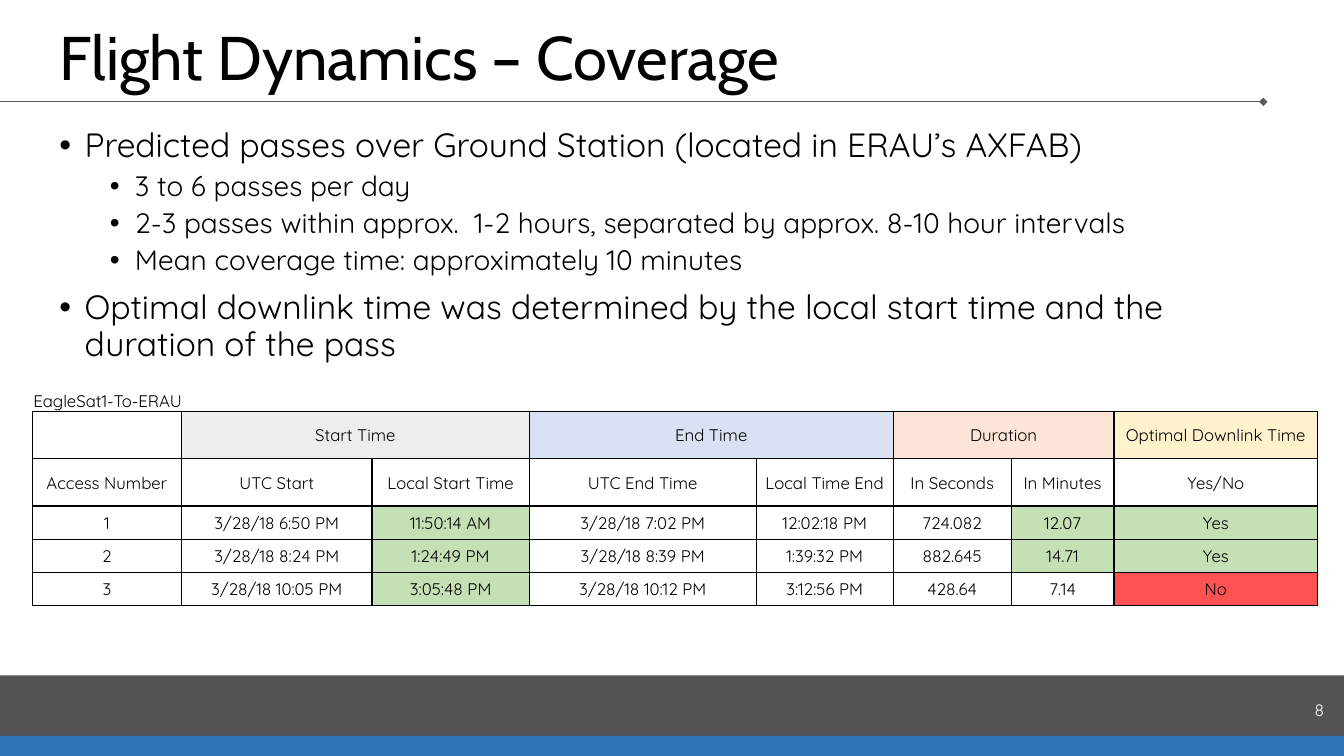
from dataclasses import dataclass
from typing import NamedTuple

from lxml import etree
from pptx import Presentation
from pptx import util as u
from pptx.dml import color
from pptx.enum import shapes, text
from pptx.oxml import ns

PX = u.Inches(1) // 100  # 100 px to the inch


@dataclass(frozen=True)
class Theme:
    heading_font: str = "Cabin"
    body_font: str = "Quicksand"
    black: str = "000000"
    white: str = "FFFFFF"
    rule: str = "595959"
    blue: str = "2E75B6"
    start: str = "EDEDED"
    end: str = "D9E1F2"
    duration: str = "FCE4D6"
    downlink: str = "FFF2CC"
    good: str = "C5E0B4"
    bad: str = "FF5353"
    title_size: int = 44
    point_size: int = 24
    subpoint_size: int = 20
    small_size: int = 12


THEME = Theme()


class Box(NamedTuple):
    left: int
    top: int
    width: int
    height: int

    def emu(self) -> list[int]:
        return [side * PX for side in self]


class Band(NamedTuple):
    box: Box
    fill: str
    opacity: int = 100


class Point(NamedTuple):
    words: str
    level: int = 0


class Group(NamedTuple):
    label: str
    column: int
    span: int
    fill: str


BANDS = [
    Band(Box(0, 670, 1333, 60), THEME.black, 67),
    Band(Box(0, 730, 1333, 20), THEME.blue),
]

POINTS = [
    Point("Predicted passes over Ground Station (located in ERAU’s AXFAB)"),
    Point("3 to 6 passes per day", 1),
    Point("2-3 passes within approx.  1-2 hours, separated by approx. 8-10 hour intervals", 1),
    Point("Mean coverage time: approximately 10 minutes", 1),
    Point("Optimal downlink time was determined by the local start time and the duration of the pass"),
]

COLUMNS = [148, 189, 156, 225, 136, 117, 102, 202]
ROWS = [33, 47, 47, 33, 33, 33]
GROUPS = [
    Group("Start Time", 1, 2, THEME.start),
    Group("End Time", 3, 2, THEME.end),
    Group("Duration", 5, 2, THEME.duration),
    Group("Optimal Downlink Time", 7, 1, THEME.downlink),
]
PASSES = [
    ["Access Number", "UTC Start", "Local Start Time", "UTC End Time",
     "Local Time End", "In Seconds", "In Minutes", "Yes/No"],
    ["1", "3/28/18 6:50 PM", "11:50:14 AM", "3/28/18 7:02 PM",
     "12:02:18 PM", "724.082", "12.07", "Yes"],
    ["2", "3/28/18 8:24 PM", "1:24:49 PM", "3/28/18 8:39 PM",
     "1:39:32 PM", "882.645", "14.71", "Yes"],
    ["3", "3/28/18 10:05 PM", "3:05:48 PM", "3/28/18 10:12 PM",
     "3:12:56 PM", "428.64", "7.14", "No"],
]
FIRST_PASS_ROW = 2
HIGHLIGHTS = {(row, column): THEME.good for row in (3, 4) for column in (2, 6, 7)}
HIGHLIGHTS |= {(5, 2): THEME.good, (5, 7): THEME.bad}


def rgb(value: str) -> color.RGBColor:
    return color.RGBColor.from_string(value)


def add_child(parent, tag: str, **attributes: str):
    return etree.SubElement(parent, ns.qn(tag), attributes)


def write(paragraph, words: str, *, size: int = THEME.small_size, font: str = THEME.body_font,
          fill: str = THEME.black, align=text.PP_ALIGN.LEFT, line_spacing: float = 1.0) -> None:
    paragraph.alignment = align
    paragraph.line_spacing = line_spacing
    run = paragraph.add_run()
    run.text = words
    run.font.size = u.Pt(size)
    run.font.name = font
    run.font.color.rgb = rgb(fill)


def add_text_frame(slide, box: Box, anchor=text.MSO_ANCHOR.TOP):
    frame = slide.shapes.add_textbox(*box.emu()).text_frame
    frame.word_wrap = True
    frame.vertical_anchor = anchor
    return frame


def add_band(slide, band: Band) -> None:
    shape = slide.shapes.add_shape(shapes.MSO_SHAPE.RECTANGLE, *band.box.emu())
    shape.shadow.inherit = False
    shape.line.fill.background()
    shape.fill.solid()
    shape.fill.fore_color.rgb = rgb(band.fill)
    if band.opacity < 100:
        tint = shape.fill._xPr.find(".//" + ns.qn("a:srgbClr"))
        add_child(tint, "a:alpha", val=str(band.opacity * 1000))


def add_title_rule(slide) -> None:
    rule = slide.shapes.add_connector(
        shapes.MSO_CONNECTOR.STRAIGHT, 0, 101 * PX, 1253 * PX, 101 * PX)
    rule.line.color.rgb = rgb(THEME.rule)
    rule.line.width = u.Pt(1)
    add_child(rule.line._get_or_add_ln(), "a:tailEnd", type="diamond")
    add_child(rule._element.spPr, "a:effectLst")


def add_points(slide, box: Box) -> None:
    frame = add_text_frame(slide, box)
    for index, point in enumerate(POINTS):
        paragraph = frame.add_paragraph() if index else frame.paragraphs[0]
        properties = paragraph._p.get_or_add_pPr()
        properties.set("marL", str((25 + 50 * point.level) * PX))
        properties.set("indent", str(-25 * PX))
        add_child(properties, "a:buFont", typeface="Arial")
        add_child(properties, "a:buChar", char="•")
        paragraph.level = point.level
        if index:
            paragraph.space_before = u.Pt(5 if point.level else 10)
        size = THEME.subpoint_size if point.level else THEME.point_size
        write(paragraph, point.words, size=size, line_spacing=0.9)


def add_border(cell, sides: str) -> None:
    properties = cell._tc.get_or_add_tcPr()
    for side in sides:
        line = add_child(properties, f"a:ln{side}", w=str(u.Pt(1)))
        add_child(add_child(line, "a:solidFill"), "a:srgbClr", val=THEME.black)


def fill_cell(cell, fill: str) -> None:
    cell.fill.solid()
    cell.fill.fore_color.rgb = rgb(fill)


def add_pass_table(slide, box: Box) -> None:
    table = slide.shapes.add_table(len(ROWS), len(COLUMNS), *box.emu()).table
    table.first_row = table.horz_banding = False
    for column, width in zip(table.columns, COLUMNS):
        column.width = width * PX
    for row, height in zip(table.rows, ROWS):
        row.height = height * PX

    # Borders, margins and fills
    for row in range(len(ROWS)):
        for column in range(len(COLUMNS)):
            cell = table.cell(row, column)
            cell.margin_left = cell.margin_right = cell.margin_top = PX
            cell.margin_bottom = 0
            cell.vertical_anchor = text.MSO_ANCHOR.MIDDLE if row else text.MSO_ANCHOR.BOTTOM
            add_border(cell, "LRTB" if row else "B")
            if (row, column) in HIGHLIGHTS:
                fill_cell(cell, HIGHLIGHTS[row, column])
            else:
                cell.fill.background()

    # Caption and column groups
    caption = table.cell(0, 0)
    caption.merge(table.cell(0, 1))
    write(caption.text_frame.paragraphs[0], "EagleSat1-To-ERAU")
    for group in GROUPS:
        cell = table.cell(1, group.column)
        if group.span > 1:
            cell.merge(table.cell(1, group.column + group.span - 1))
        fill_cell(cell, group.fill)
        write(cell.text_frame.paragraphs[0], group.label, align=text.PP_ALIGN.CENTER)

    # Column names and passes
    for row, values in enumerate(PASSES, FIRST_PASS_ROW):
        for column, value in enumerate(values):
            paragraph = table.cell(row, column).text_frame.paragraphs[0]
            write(paragraph, value, align=text.PP_ALIGN.CENTER)


def main() -> None:
    presentation = Presentation()
    presentation.slide_width, presentation.slide_height = 1333 * PX, 750 * PX
    slide = presentation.slides.add_slide(presentation.slide_layouts[6])

    # Frame of the slide
    for band in BANDS:
        add_band(slide, band)
    add_title_rule(slide)

    # Title and page number
    title = add_text_frame(slide, Box(49, 19, 1150, 79), text.MSO_ANCHOR.BOTTOM)
    write(title.paragraphs[0], "Flight Dynamics – Coverage", size=THEME.title_size,
          font=THEME.heading_font, line_spacing=0.9)
    number = add_text_frame(slide, Box(1023, 684, 300, 40), text.MSO_ANCHOR.MIDDLE)
    write(number.paragraphs[0], "8", fill=THEME.white, align=text.PP_ALIGN.RIGHT)

    # Content
    add_pass_table(slide, Box(32, 375, sum(COLUMNS), sum(ROWS)))
    add_points(slide, Box(49, 123, 1239, 252))
    presentation.save("out.pptx")


if __name__ == "__main__":
    main()
